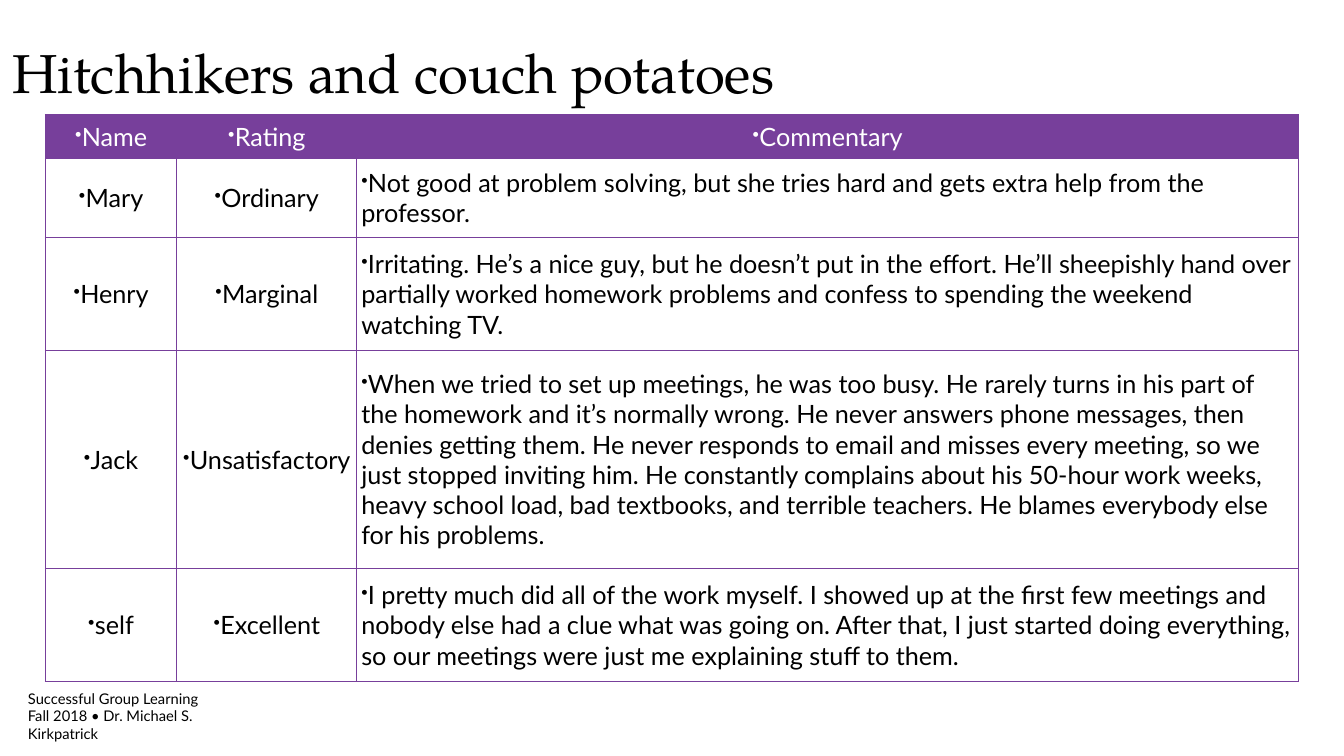
import pptx
import pptx.util
import pptx.dml.color
import pptx.enum.text
from lxml import etree
from pptx.oxml.ns import qn

Pt = pptx.util.Pt
ALIGN = pptx.enum.text.PP_ALIGN
MIDDLE = pptx.enum.text.MSO_ANCHOR.MIDDLE

COLORS = {"text": "000000", "paper": "FFFFFF", "purple": "773F9B"}
BODY_FONT, TITLE_FONT = "Lato", "TeX Gyre Pagella"

COLUMN_WIDTHS = [125.28, 171.36, 897.12]
ROW_HEIGHTS = [41.76, 74.88, 108, 207.36, 108]
ROWS = [
    ("Name", "Rating", "Commentary"),
    ("Mary", "Ordinary",
     "Not good at problem solving, but she tries hard and gets extra help from the professor."),
    ("Henry", "Marginal",
     "Irritating. He’s a nice guy, but he doesn’t put in the effort. He’ll sheepishly hand over "
     "partially worked homework problems and confess to spending the weekend watching TV."),
    ("Jack", "Unsatisfactory",
     "When we tried to set up meetings, he was too busy. He rarely turns in his part of the "
     "homework and it’s normally wrong. He never answers phone messages, then denies getting "
     "them. He never responds to email and misses every meeting, so we just stopped inviting "
     "him. He constantly complains about his 50-hour work weeks, heavy school load, bad "
     "textbooks, and terrible teachers. He blames everybody else for his problems."),
    ("self", "Excellent",
     "I pretty much did all of the work myself. I showed up at the first few meetings and "
     "nobody else had a clue what was going on. After that, I just started doing everything, "
     "so our meetings were just me explaining stuff to them."),
]


def rgb(name):
    return pptx.dml.color.RGBColor.from_string(COLORS[name])


def set_font(para, name, size, color):
    para.font.name = name
    para.font.size = Pt(size)
    para.font.color.rgb = rgb(color)


def set_margins(target, size):
    target.margin_left = target.margin_right = Pt(size)
    target.margin_top = target.margin_bottom = Pt(size)


def add_text(page, left, top, width, height, lines, font, size, wrap):
    box = page.shapes.add_textbox(Pt(left), Pt(top), Pt(width), Pt(height))
    frame = box.text_frame
    frame.word_wrap = wrap
    frame.vertical_anchor = MIDDLE
    set_margins(frame, 2.88)
    frame.text = "\n".join(lines)
    for para in frame.paragraphs:
        para.alignment = ALIGN.LEFT
        set_font(para, font, size, "text")


def add_bullet(para):
    properties = para._p.get_or_add_pPr()
    properties.set("marL", "0")
    properties.set("indent", "0")
    etree.SubElement(properties, qn("a:buSzPct")).set("val", "75000")
    etree.SubElement(properties, qn("a:buChar")).set("char", "•")


def add_borders(cell):
    """Draw the four cell edges; they must come before the fill in the XML."""
    properties = cell._tc.get_or_add_tcPr()
    for edge in ("a:lnL", "a:lnR", "a:lnT", "a:lnB"):
        line = etree.SubElement(properties, qn(edge))
        line.set("w", str(Pt(1)))
        fill = etree.SubElement(line, qn("a:solidFill"))
        etree.SubElement(fill, qn("a:srgbClr")).set("val", COLORS["purple"])


def fill_cell(cell, text, is_header, alignment):
    add_borders(cell)
    cell.fill.solid()
    cell.fill.fore_color.rgb = rgb("purple" if is_header else "paper")
    cell.vertical_anchor = MIDDLE
    set_margins(cell, 4.32)
    cell.text = text
    para = cell.text_frame.paragraphs[0]
    para.alignment = alignment
    add_bullet(para)
    set_font(para, BODY_FONT, 24, "paper" if is_header else "text")


def add_ratings_table(page, left, top):
    table = page.shapes.add_table(
        len(ROWS), len(COLUMN_WIDTHS), Pt(left), Pt(top),
        Pt(sum(COLUMN_WIDTHS)), Pt(sum(ROW_HEIGHTS))).table
    for column, width in zip(table.columns, COLUMN_WIDTHS):
        column.width = Pt(width)
    for row, height in zip(table.rows, ROW_HEIGHTS):
        row.height = Pt(height)
    for r, texts in enumerate(ROWS):
        for c, text in enumerate(texts):
            is_header = r == 0
            is_comment = c == 2 and not is_header
            fill_cell(table.cell(r, c), text, is_header,
                      ALIGN.LEFT if is_comment else ALIGN.CENTER)


def main():
    deck = pptx.Presentation()
    deck.slide_width, deck.slide_height = Pt(1280.16), Pt(720)
    page = deck.slides.add_slide(deck.slide_layouts[6])
    add_text(page, 23.76, 660.24, 233.28, 43.2,
             ["Successful Group Learning", "Fall 2018 • Dr. Michael S. Kirkpatrick"],
             BODY_FONT, 14, False)
    add_text(page, 8.64, 28.8, 814.32, 79.2,
             ["Hitchhikers and couch potatoes"], TITLE_FONT, 52, True)
    add_ratings_table(page, 43.2, 109.44)
    deck.save("out.pptx")


if __name__ == "__main__":
    main()
